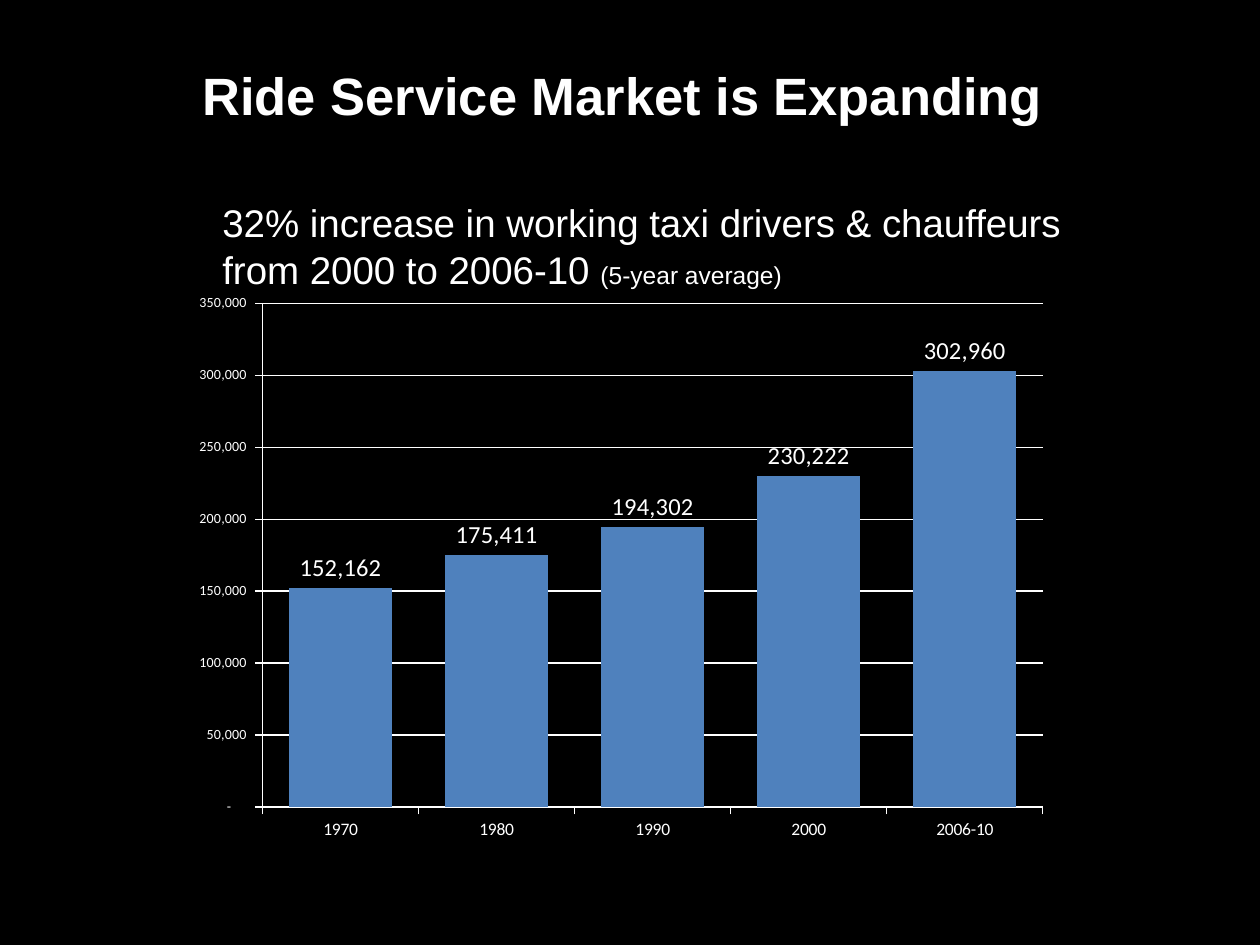
from dataclasses import dataclass

from pptx import Presentation
from pptx.chart.data import CategoryChartData
from pptx.dml.color import RGBColor
from pptx.enum.chart import XL_CHART_TYPE, XL_LABEL_POSITION, XL_TICK_MARK
from pptx.enum.text import MSO_ANCHOR, PP_ALIGN
from pptx.util import Pt

COLUMN = XL_CHART_TYPE.COLUMN_CLUSTERED
OUTSIDE_END = XL_LABEL_POSITION.OUTSIDE_END
TICK_OUT, TICK_NONE = XL_TICK_MARK.OUTSIDE, XL_TICK_MARK.NONE
TOP = MSO_ANCHOR.TOP
LEFT, CENTER = PP_ALIGN.LEFT, PP_ALIGN.CENTER

BLACK = RGBColor(0x00, 0x00, 0x00)
WHITE = RGBColor(0xFF, 0xFF, 0xFF)
BLUE = RGBColor(0x4F, 0x81, 0xBD)
NUMBER_FORMAT = r'_(* #,##0_);_(* \(#,##0\);_(* "-"??_);_(@_)'

DRIVERS = {
    "1970": 152162,
    "1980": 175411,
    "1990": 194302,
    "2000": 230222,
    "2006-10": 302960,
}


@dataclass
class Box:
    left: float
    top: float
    width: float
    height: float

    def lengths(self) -> tuple:
        return Pt(self.left), Pt(self.top), Pt(self.width), Pt(self.height)


@dataclass
class Run:
    text: str
    size: float
    bold: bool = False


def add_text(s, box: Box, runs: list[Run], align=LEFT) -> None:
    tf = s.shapes.add_textbox(*box.lengths()).text_frame
    tf.word_wrap = True
    tf.vertical_anchor = TOP
    tf.margin_top = Pt(6)
    p = tf.paragraphs[0]
    p.alignment = align
    for run in runs:
        r = p.add_run()
        r.text = run.text
        r.font.name = "Arial"
        r.font.size = Pt(run.size)
        r.font.bold = run.bold
        r.font.color.rgb = WHITE


def style_line(line) -> None:
    line.color.rgb = WHITE
    line.width = Pt(0.75)


def add_driver_chart(s, box: Box) -> None:
    data = CategoryChartData(number_format=NUMBER_FORMAT)
    data.categories = list(DRIVERS)
    data.add_series("Series 1", list(DRIVERS.values()))
    chart = s.shapes.add_chart(COLUMN, *box.lengths(), data).chart
    chart.has_legend = False
    chart.has_title = False
    chart.font.name = "Calibri"
    chart.font.size = Pt(10)
    chart.font.color.rgb = WHITE

    # Axes
    values = chart.value_axis
    for axis in (chart.category_axis, values):
        axis.major_tick_mark = TICK_OUT
        axis.minor_tick_mark = TICK_NONE
        style_line(axis.format.line)
    values.minimum_scale = 0
    values.maximum_scale = 350000
    values.major_unit = 50000
    values.has_major_gridlines = True
    style_line(values.major_gridlines.format.line)
    values.tick_labels.font.size = Pt(8)
    values.tick_labels.number_format = NUMBER_FORMAT
    values.tick_labels.number_format_is_linked = False

    # Columns and their labels
    plot = chart.plots[0]
    plot.gap_width = 52
    plot.vary_by_categories = False
    series = plot.series[0]
    series.format.fill.solid()
    series.format.fill.fore_color.rgb = BLUE
    labels = series.data_labels
    labels.show_value = True
    labels.position = OUTSIDE_END
    labels.number_format = NUMBER_FORMAT
    labels.number_format_is_linked = False
    labels.font.size = Pt(14)
    labels.font.color.rgb = WHITE


def main() -> None:
    prs = Presentation()
    prs.slide_width, prs.slide_height = Pt(720), Pt(540)
    s = prs.slides.add_slide(prs.slide_layouts[6])
    s.background.fill.solid()
    s.background.fill.fore_color.rgb = BLACK

    # Chart
    add_driver_chart(s, Box(102, 162, 504, 324))

    # Key message
    add_text(s, Box(120, 108, 504, 60.5), [
        Run("32% increase in working taxi drivers & chauffeurs from 2000 to 2006-10 ", 22),
        Run("(5-year average)", 14),
    ])

    # Title
    add_text(s, Box(36, 30, 648, 60),
             [Run("Ride Service Market is Expanding ", 30, bold=True)], CENTER)

    prs.save("out.pptx")


if __name__ == "__main__":
    main()
